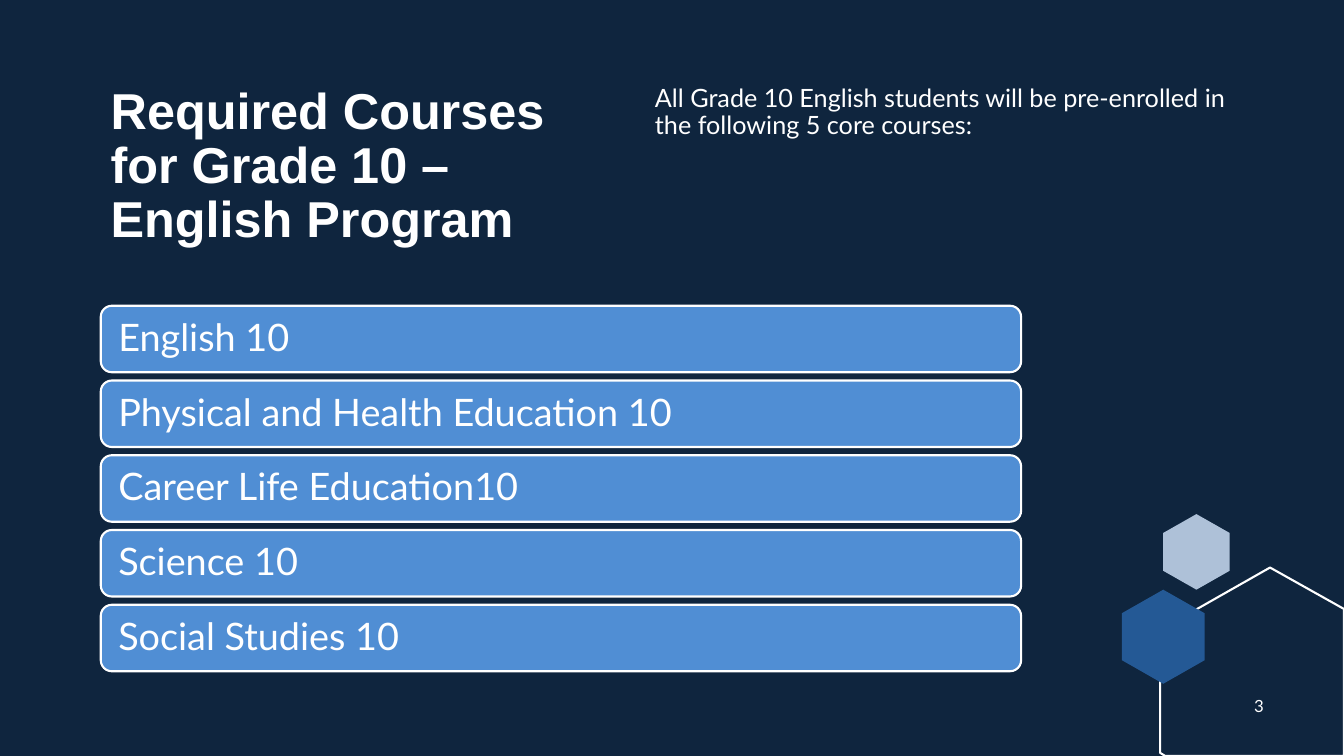
from dataclasses import dataclass

import pptx
import pptx.dml.color
import pptx.enum.shapes
import pptx.enum.text
import pptx.util

Pt = pptx.util.Pt
Rgb = pptx.dml.color.RGBColor.from_string
Align = pptx.enum.text.PP_ALIGN
Anchor = pptx.enum.text.MSO_ANCHOR


@dataclass(frozen=True)
class Theme:
    back: str = "0F253E"
    white: str = "FFFFFF"
    bar: str = "508ED4"
    pale: str = "AEC1D8"
    deep: str = "245995"
    head: str = "Arial"
    body: str = "Lato"
    title: float = 36
    course: float = 27
    intro: float = 18
    number: float = 12
    line: float = 1.5


def apply(target, values):
    for name, value in values.items():
        setattr(target, name, value)


class Page:
    def __init__(self, slide, theme):
        self.slide = slide
        self.theme = theme
        fill = slide.background.fill
        fill.solid()
        fill.fore_color.rgb = Rgb(theme.back)

    def paint(self, shape, fill=None, line=None):
        shape.shadow.inherit = False
        if fill:
            shape.fill.solid()
            shape.fill.fore_color.rgb = Rgb(fill)
        else:
            shape.fill.background()
        if line:
            shape.line.color.rgb = Rgb(line)
            shape.line.width = Pt(self.theme.line)
        else:
            shape.line.fill.background()

    def label(self, shape, text, size, face, bold=False, frame=None, para=None):
        box = shape.text_frame
        apply(box, {"word_wrap": True, **(frame or {})})
        line = box.paragraphs[0]
        line.text = text
        apply(line, {"line_spacing": 0.9, **(para or {})})
        apply(line.font, {"size": Pt(size), "name": face, "bold": bold})
        line.font.color.rgb = Rgb(self.theme.white)

    def text(self, area, *args, **form):
        box = self.slide.shapes.add_textbox(*map(Pt, area))
        self.label(box, *args, **form)

    def bar(self, area, text):
        kind = pptx.enum.shapes.MSO_SHAPE.ROUNDED_RECTANGLE
        shape = self.slide.shapes.add_shape(kind, *map(Pt, area))
        self.paint(shape, self.theme.bar, self.theme.white)
        frame = {"vertical_anchor": Anchor.MIDDLE, "margin_left": Pt(10.2)}
        self.label(shape, text, self.theme.course, self.theme.body,
                   frame=frame, para={"alignment": Align.LEFT})

    def outline(self, points, **style):
        first, *rest = [(Pt(x), Pt(y)) for x, y in points]
        pen = self.slide.shapes.build_freeform(*first)
        pen.add_line_segments(rest, close=True)
        self.paint(pen.convert_to_shape(), **style)

    def hexagon(self, mid, top, width, height, fill):
        """Draw a hexagon that stands on a corner."""
        half = width / 2
        high, low = top + height / 4, top + height * 3 / 4
        self.outline([(mid, top), (mid + half, high), (mid + half, low),
                      (mid, top + height), (mid - half, low),
                      (mid - half, high)], fill=fill)


COURSES = ["English 10", "Physical and Health Education 10",
           "Career Life Education10", "Science 10", "Social Studies 10"]


def main():
    deck = pptx.Presentation()
    apply(deck, {"slide_width": Pt(960), "slide_height": Pt(540)})
    theme = Theme()
    page = Page(deck.slides.add_slide(deck.slide_layouts[6]), theme)

    page.hexagon(854.6, 367.2, 47.5, 54, theme.pale)
    page.outline([(907.2, 405.4), (960, 435), (960, 540), (832.3, 540),
                  (828.7, 537.8), (828.7, 450)], line=theme.white)
    page.hexagon(830.9, 421.2, 59, 67.2, theme.deep)

    page.text((72, 57.6, 367.2, 136.8),
              "Required Courses for Grade 10 – English Program",
              theme.title, theme.head, bold=True)
    page.text((460.8, 57.6, 432, 136.8),
              "All Grade 10 English students will be pre-enrolled in "
              "the following 5 core courses:", theme.intro, theme.body)
    page.text((881.3, 489.6, 36, 28.8), "3", theme.number, theme.body,
              frame={"vertical_anchor": Anchor.MIDDLE},
              para={"alignment": Align.CENTER, "line_spacing": 1.0,
                    "space_after": Pt(6)})

    for row, course in enumerate(COURSES):
        page.bar((72, 218.4 + 53.4 * row, 657.4, 47.5), course)

    deck.save("out.pptx")


if __name__ == "__main__":
    main()
